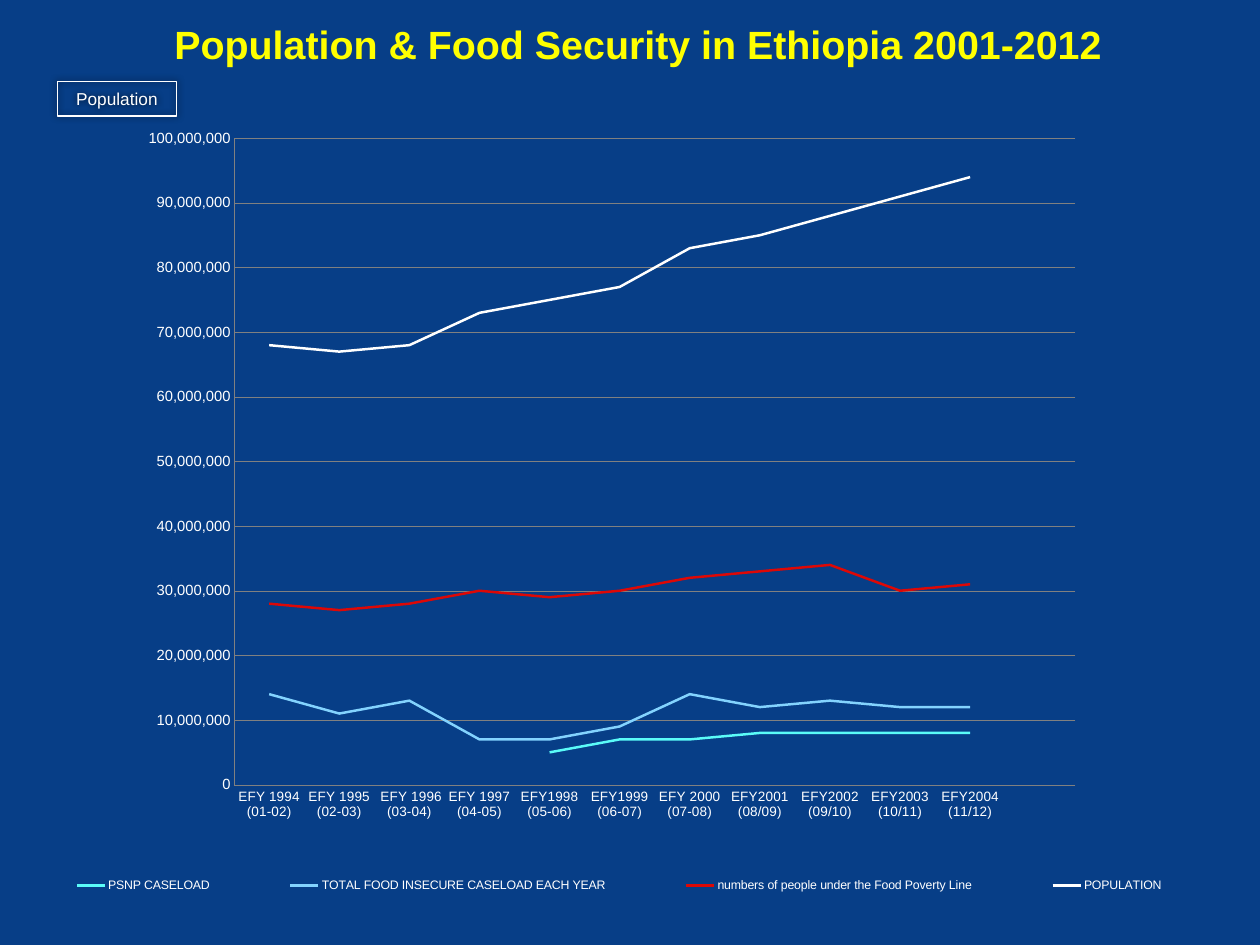
from lxml import etree
from pptx import Presentation
from pptx.chart.data import CategoryChartData
from pptx.dml.color import RGBColor
from pptx.enum.chart import XL_CHART_TYPE, XL_LEGEND_POSITION, XL_MARKER_STYLE, XL_TICK_MARK
from pptx.enum.shapes import MSO_SHAPE
from pptx.enum.text import MSO_ANCHOR, PP_ALIGN
from pptx.oxml import parse_xml
from pptx.oxml.ns import nsdecls, qn
from pptx.util import Inches, Pt

LINE = XL_CHART_TYPE.LINE
BOTTOM = XL_LEGEND_POSITION.BOTTOM
BARE = XL_MARKER_STYLE.NONE
NO_TICK = XL_TICK_MARK.NONE
RECT = MSO_SHAPE.RECTANGLE
MIDDLE = MSO_ANCHOR.MIDDLE
CENTER = PP_ALIGN.CENTER

COLORS = {
    "back": "073E87", "title": "FFFF00", "text": "FFFFFF", "grid": "808080",
    "psnp": "5AFBF8", "total": "83D3FE", "poor": "DD0806", "people": "FFFFFF",
}


def rgb(name):
    return RGBColor.from_string(COLORS[name])


def set_layout(node, index, target, box):
    """Place a chart part by fractions of the chart frame."""
    for old in node.findall(qn("c:layout")):
        node.remove(old)
    layout = parse_xml(f"<c:layout {nsdecls('c')}><c:manualLayout/></c:layout>")
    parts = [("xMode", "edge"), ("yMode", "edge"), *zip("xywh", box)]
    if target:
        parts.insert(0, ("layoutTarget", target))
    for tag, val in parts:
        etree.SubElement(layout[0], qn(f"c:{tag}")).set("val", str(val))
    node.insert(index, layout)


prs = Presentation()
prs.slide_width, prs.slide_height = Inches(14.22), Inches(10.67)
slide = prs.slides.add_slide(prs.slide_layouts[6])
slide.background.fill.solid()
slide.background.fill.fore_color.rgb = rgb("back")

# Chart data, in millions of people
years = [
    "EFY 1994 (01-02)", "EFY 1995 (02-03)", " EFY 1996 (03-04)", "EFY 1997 (04-05)",
    "EFY1998 (05-06)", "EFY1999 (06-07)", "EFY 2000 (07-08)", "EFY2001 (08/09)",
    "EFY2002 (09/10)", "EFY2003 (10/11)", "EFY2004 (11/12)", "",
]
series = [
    ("PSNP CASELOAD", "psnp", [None] * 4 + [5, 7, 7, 8, 8, 8, 8]),
    ("TOTAL FOOD INSECURE CASELOAD EACH YEAR", "total",
     [14, 11, 13, 7, 7, 9, 14, 12, 13, 12, 12]),
    ("numbers of people under the Food Poverty Line", "poor",
     [28, 27, 28, 30, 29, 30, 32, 33, 34, 30, 31]),
    ("POPULATION", "people", [68, 67, 68, 73, 75, 77, 83, 85, 88, 91, 94]),
]
data = CategoryChartData(number_format="#,##0")
data.categories = years
for name, _, vals in series:
    data.add_series(name, [v and v * 1_000_000 for v in vals] + [None])

# Line chart
chart = slide.shapes.add_chart(
    LINE, Inches(-0.76), Inches(0.29), Inches(15.19), Inches(11.16), data).chart
chart.has_title = False
chart.font.name = "Arial"
chart.font.size = Pt(10)
chart.font.color.rgb = rgb("text")
plot = chart.plots[0]
plot.vary_by_categories = False
for line, (_, color, _) in zip(plot.series, series):
    line.smooth = False
    line.marker.style = BARE
    line.format.line.width = Pt(2)
    line.format.line.color.rgb = rgb(color)

# Axes and grid
years_axis, count_axis = chart.category_axis, chart.value_axis
count_axis.minimum_scale, count_axis.maximum_scale = 0, 100_000_000
count_axis.major_unit = 10_000_000
count_axis.has_major_gridlines = True
count_axis.tick_labels.number_format = "#,##0"
count_axis.tick_labels.number_format_is_linked = False
for axis, size in ((years_axis, 11), (count_axis, 12)):
    axis.major_tick_mark = axis.minor_tick_mark = NO_TICK
    font = axis.tick_labels.font
    font.name, font.size = "Arial", Pt(size)
    font.color.rgb = rgb("text")
for part in (years_axis, count_axis, count_axis.major_gridlines):
    part.format.line.width = Pt(0.25)
    part.format.line.color.rgb = rgb("grid")

# Legend and plot positions
chart.has_legend = True
legend = chart.legend
legend.position = BOTTOM
legend.include_in_layout = True
legend.font.name, legend.font.size = "Arial", Pt(10)
legend.font.color.rgb = rgb("text")
area = chart.element.find(".//" + qn("c:plotArea"))
set_layout(area, 0, "inner", (0.224, 0.114, 0.625, 0.654))
set_layout(area.getparent().find(qn("c:legend")), 1, None, (0.05, 0.84, 0.92, 0.06))

# Axis label box with a soft shadow
label = slide.shapes.add_shape(RECT, Inches(0.65), Inches(0.92), Inches(1.34), Inches(0.39))
label.fill.background()
label.line.color.rgb = rgb("text")
label.line.width = Pt(1)
label.shadow.inherit = False
glow = label.element.spPr.find(qn("a:effectLst"))
glow.append(parse_xml(
    f'<a:outerShdw {nsdecls("a")} blurRad="{Pt(6)}" dist="0" dir="0">'
    '<a:srgbClr val="000000"><a:alpha val="80000"/></a:srgbClr></a:outerShdw>'))

# Title, then text of both boxes
title = slide.shapes.add_textbox(Inches(0.81), Inches(0.06), Inches(12.8), Inches(0.87))
for box, text, size, color, bold, pad in (
    (label, "Population", 14, "text", False, 0.06),
    (title, "Population & Food Security in Ethiopia 2001-2012", 32, "title", True, 0),
):
    frame = box.text_frame
    frame.text = text
    frame.word_wrap = True
    frame.vertical_anchor = MIDDLE
    frame.margin_left = frame.margin_right = Inches(pad)
    frame.margin_top = frame.margin_bottom = Inches(pad)
    para = frame.paragraphs[0]
    para.alignment = CENTER
    font = para.runs[0].font
    font.name, font.size, font.bold = "Arial", Pt(size), bold
    font.color.rgb = rgb(color)

prs.save("out.pptx")
